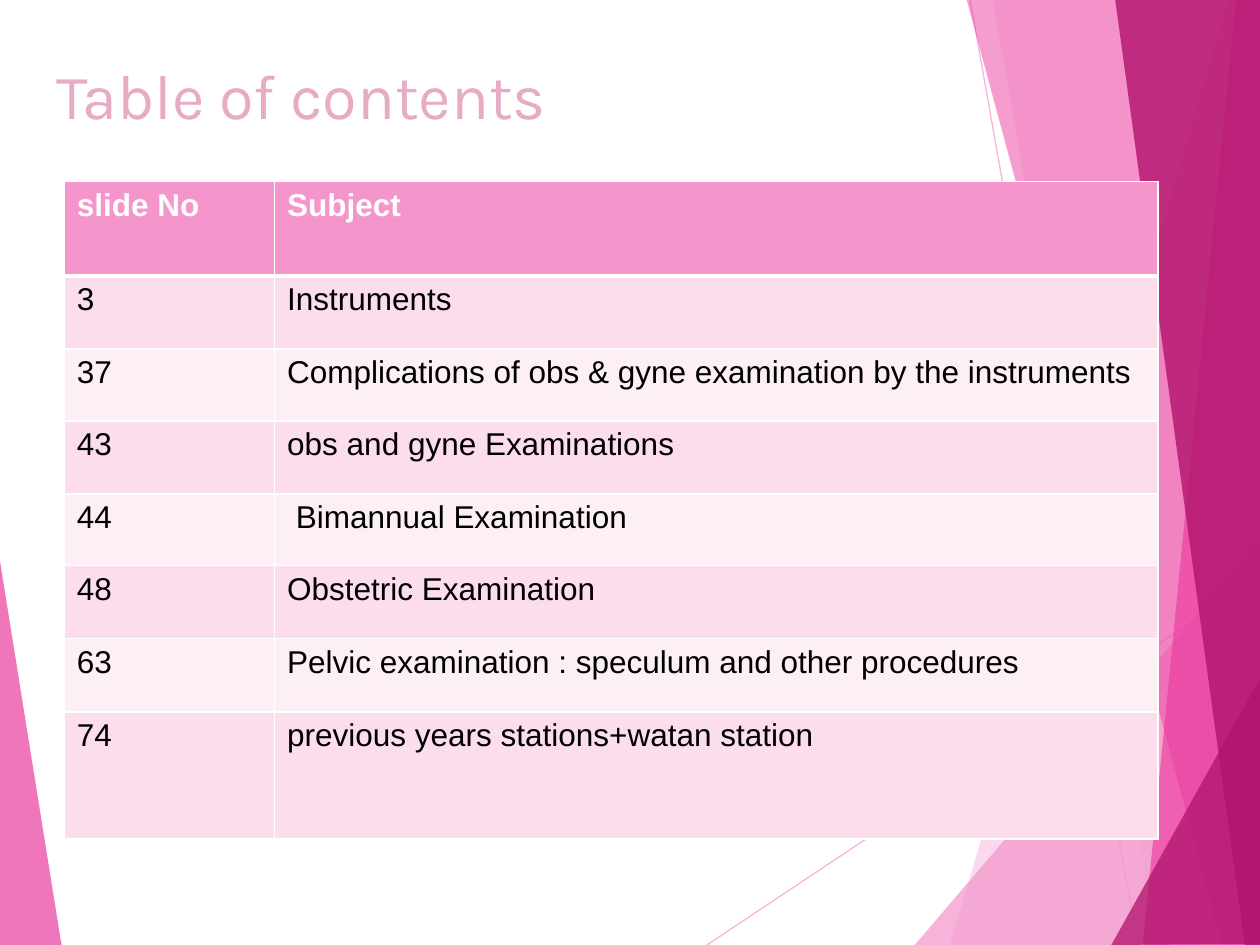
from dataclasses import dataclass

from lxml.etree import SubElement
from pptx import Presentation
from pptx.dml.color import RGBColor
from pptx.enum.shapes import MSO_CONNECTOR as Connector
from pptx.enum.text import MSO_ANCHOR as Anchor
from pptx.oxml.ns import qn
from pptx.util import Emu, Pt

PX = 9144  # EMU per px, 100 px to the inch


@dataclass(frozen=True)
class Theme:
    light: str = "F496CB"
    middle: str = "EB3D9F"
    dark: str = "B2136D"
    title: str = "E7ABC5"
    title_edge: str = "BC356F"
    white: str = "FFFFFF"
    ink: str = "000000"
    bands: tuple = ("FBDDEC", "FDEFF6")
    title_font: str = "Karla"
    body_font: str = "Arial"
    title_size: int = 36
    body_size: int = 18


THEME = Theme()

RAYS = [((561, 750), (1001, 457)), ((770, 0), (903, 750))]

# Corner points, colour and opacity in percent, from back to front
FACETS = [
    ([(975, 0), (754, 750), (1002, 751), (1001, 1)], THEME.light, 36),
    ([(788, -1), (919, 750), (1001, 750), (1001, -1)], THEME.light, 20),
    ([(726, 750), (1000, 429), (1001, 750)], THEME.light, 72),
    ([(767, -1), (970, 750), (1001, 749), (1001, -1)], THEME.middle, 50),
    ([(981, -1), (907, 750), (1001, 750), (1000, -1)], THEME.middle, 66),
    ([(885, -1), (988, 750), (1002, 750), (1000, -1)], THEME.dark, 80),
    ([(882, 750), (1002, 535), (1002, 749)], THEME.dark, 76),
    ([(-1, 439), (49, 751), (-1, 750)], THEME.middle, 70),
]

COLUMNS = [167, 701]
ROW_HEIGHTS = [75, 58, 57, 58, 57, 58, 58, 101]
ROWS = [
    ("slide No", "Subject"),
    ("3", "Instruments"),
    ("37", "Complications of obs & gyne examination by the instruments"),
    ("43", "obs and gyne Examinations"),
    ("44", " Bimannual Examination"),
    ("48", "Obstetric Examination"),
    ("63", "Pelvic examination : speculum and other procedures"),
    ("74", "previous years stations+watan station"),
]


def px(*lengths):
    return [Emu(length * PX) for length in lengths]


def paint(fill, color, opacity=100):
    fill.solid()
    fill.fore_color.rgb = RGBColor.from_string(color)
    if opacity < 100:
        set_opacity(fill._xPr, opacity)


def set_opacity(properties, opacity):
    color = properties.find(qn("a:solidFill"))[0]
    SubElement(color, qn("a:alpha"), val=str(opacity * 1000))


def style_run(run, font, size, color, bold=False):
    run.font.name = font
    run.font.size = Pt(size)
    run.font.bold = bold
    run.font.color.rgb = RGBColor.from_string(color)


def add_line(parent, tag, color, width):
    line = SubElement(parent, qn(tag), w=str(Pt(width)))
    fill = SubElement(line, qn("a:solidFill"))
    SubElement(fill, qn("a:srgbClr"), val=color)
    return line


def draw_backdrop(slide, left, top):
    """Draw the thin rays and the translucent facets over them."""
    for (x1, y1), (x2, y2) in RAYS:
        ray = slide.shapes.add_connector(
            Connector.STRAIGHT, *px(left + x1, top + y1, left + x2, top + y2))
        ray.line.width = Pt(0.75)
        paint(ray.line.fill, THEME.light, 70)
        SubElement(ray._element.spPr, qn("a:effectLst"))
    for corners, color, opacity in FACETS:
        points = [px(left + x, top + y) for x, y in corners]
        builder = slide.shapes.build_freeform(*points[0])
        builder.add_line_segments(points[1:], close=True)
        facet = builder.convert_to_shape()
        facet.shadow.inherit = False
        facet.line.fill.background()
        paint(facet.fill, color, opacity)


def draw_title(slide, left, top, width, height):
    box = slide.shapes.add_textbox(*px(left, top, width, height))
    frame = box.text_frame
    frame.word_wrap = True
    frame.vertical_anchor = Anchor.TOP
    frame.margin_top = px(10)[0]
    frame.text = "Table of contents"
    run = frame.paragraphs[0].runs[0]
    style_run(run, THEME.title_font, THEME.title_size, THEME.title)
    properties = run.font._element
    properties.insert(0, add_line(properties, "a:ln", THEME.title_edge, 1.75))


def fill_cell(cell, text, is_header, band):
    cell.text_frame.text = text
    style_run(cell.text_frame.paragraphs[0].runs[0], THEME.body_font, THEME.body_size,
              THEME.white if is_header else THEME.ink, is_header)
    properties = cell._tc.get_or_add_tcPr()
    for side in "LRTB":
        add_line(properties, f"a:ln{side}", THEME.white,
                 3 if is_header and side == "B" else 1)
    paint(cell.fill, THEME.light if is_header else band)


def draw_contents(slide, left, top):
    frame = slide.shapes.add_table(
        len(ROWS), len(COLUMNS), *px(left, top, sum(COLUMNS), sum(ROW_HEIGHTS)))
    table = frame.table
    for column, width in zip(table.columns, px(*COLUMNS)):
        column.width = width
    for row, height in zip(table.rows, px(*ROW_HEIGHTS)):
        row.height = height
    for index, texts in enumerate(ROWS):
        for cell, text in zip(table.rows[index].cells, texts):
            fill_cell(cell, text, index == 0, THEME.bands[(index - 1) % 2])


def main():
    presentation = Presentation()
    presentation.slide_width, presentation.slide_height = px(1000, 750)
    slide = presentation.slides.add_slide(presentation.slide_layouts[6])
    paint(slide.background.fill, THEME.white)
    draw_backdrop(slide, 0, 0)
    draw_title(slide, 35, 35, 694, 144)
    draw_contents(slide, 51, 144)
    presentation.save("out.pptx")


if __name__ == "__main__":
    main()
